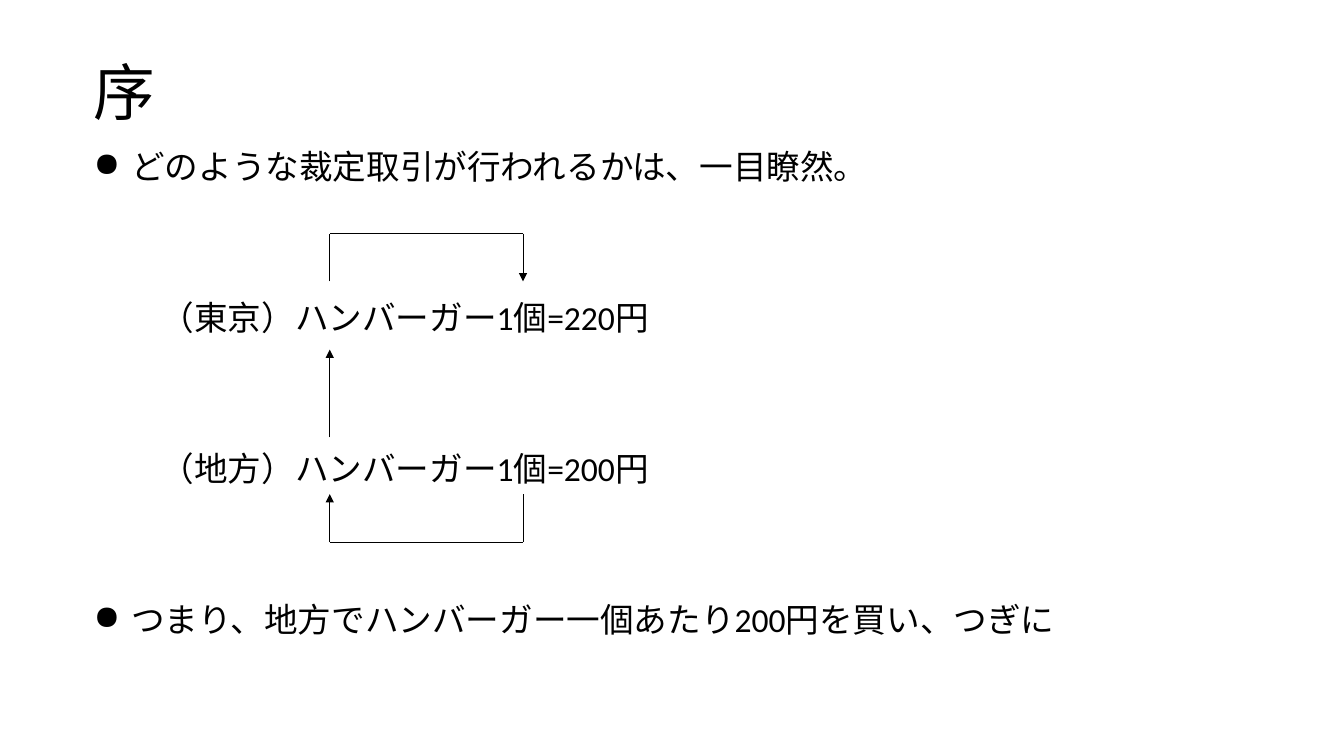
from lxml import etree
from pptx import Presentation
from pptx.dml.color import RGBColor
from pptx.enum.shapes import MSO_CONNECTOR
from pptx.enum.text import MSO_ANCHOR
from pptx.oxml.ns import qn
from pptx.util import Cm, Pt

STRAIGHT = MSO_CONNECTOR.STRAIGHT
MIDDLE = MSO_ANCHOR.MIDDLE
COLORS = {"ink": "000000"}
FONT = "Calibri"
INK = RGBColor.from_string(COLORS["ink"])

prs = Presentation()
prs.slide_width, prs.slide_height = Cm(33.87), Cm(19.05)
slide = prs.slides.add_slide(prs.slide_layouts[6])


def write(paragraph, text, size):
    paragraph.text = text
    paragraph.line_spacing = 0.9
    font = paragraph.runs[0].font
    font.name, font.size = FONT, Pt(size)
    font.color.rgb = INK


def draw_route(shapes, points):
    """Straight segments through the points, with an arrowhead at the end."""
    for start, end in zip(points, points[1:]):
        segment = shapes.add_connector(
            STRAIGHT, *(Cm(value) for value in start + end))
        segment.line.width = Pt(0.5)
        segment.line.color.rgb = INK
        properties = segment._element.spPr
        if end == points[-1]:
            etree.SubElement(properties.find(qn("a:ln")), qn("a:tailEnd"), type="triangle")
        etree.SubElement(properties, qn("a:effectLst"))


# Title
title = slide.shapes.add_textbox(Cm(2.11), Cm(1.17), Cm(29.51), Cm(2.46)).text_frame
title.word_wrap = True
title.vertical_anchor = MIDDLE
write(title.paragraphs[0], "序", 44)

# Statements (bulleted) and prices (indented)
statements = [
    ("どのような裁定取引が行われるかは、一目瞭然。", True),
    ("（東京）ハンバーガー1個=220円", False),
    ("（地方）ハンバーガー1個=200円", False),
    ("つまり、地方でハンバーガー一個あたり200円を買い、つぎに", True),
]
body = slide.shapes.add_textbox(Cm(2.11), Cm(3.66), Cm(29.51), Cm(13.44)).text_frame
body.word_wrap = True
for index, (text, bulleted) in enumerate(statements):
    paragraph = body.paragraphs[0] if index == 0 else body.add_paragraph()
    write(paragraph, text, 24)
    paragraph.space_before = Pt(82 if index else 10)
    layout = paragraph._p.get_or_add_pPr()
    if bulleted:
        layout.set("marL", str(Cm(0.95)))
        layout.set("indent", str(-Cm(0.95)))
        etree.SubElement(layout, qn("a:buChar"), char="●")
    else:
        layout.set("marL", str(Cm(1.69)))

# Trade cycle between the two prices
burger_x, price_x = 8.31, 13.18
tokyo_top, tokyo_y = 5.89, 7.09
region_y, region_bottom = 12.45, 13.67
buy_route = [(price_x, region_y), (price_x, region_bottom),
             (burger_x, region_bottom), (burger_x, region_y)]
sell_route = [(burger_x, tokyo_y), (burger_x, tokyo_top),
              (price_x, tokyo_top), (price_x, tokyo_y)]
for route in (buy_route, sell_route):
    draw_route(slide.shapes.add_group_shape().shapes, route)
draw_route(slide.shapes, [(burger_x, 11.02), (burger_x, 8.81)])

prs.save("out.pptx")
